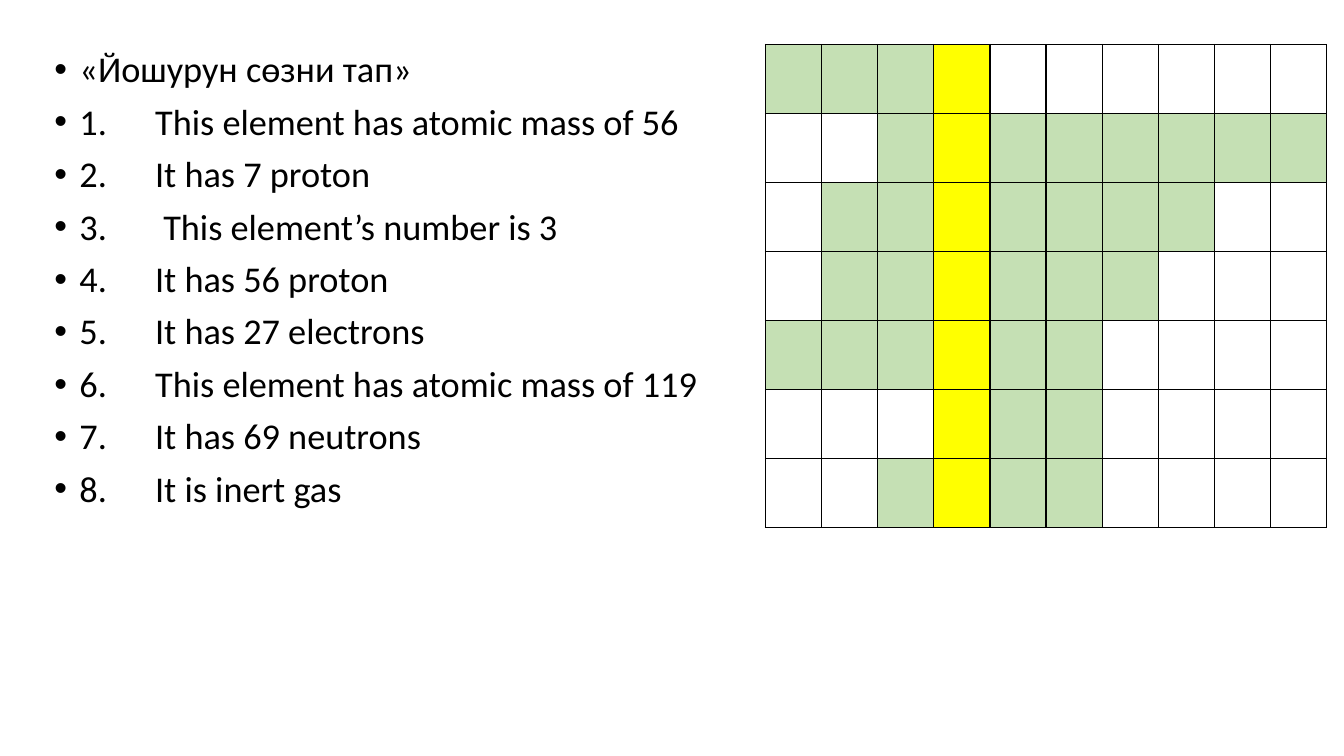
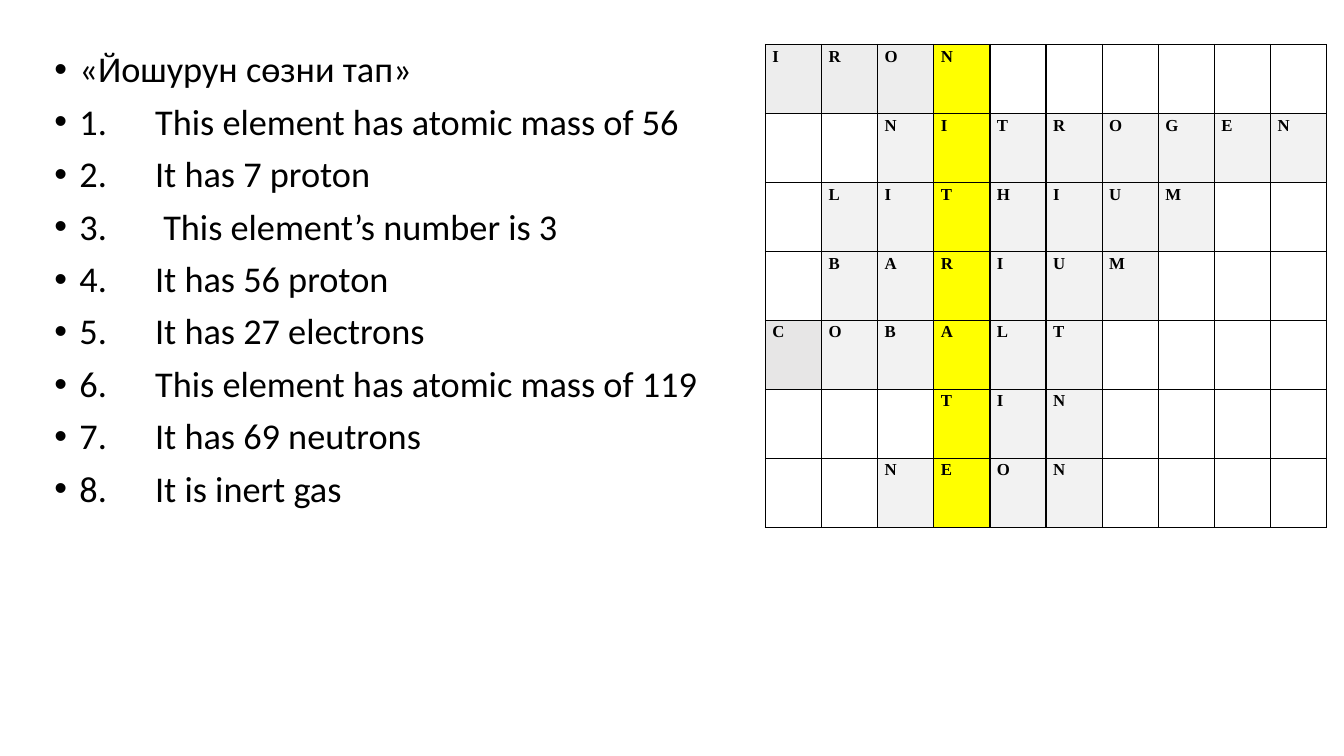
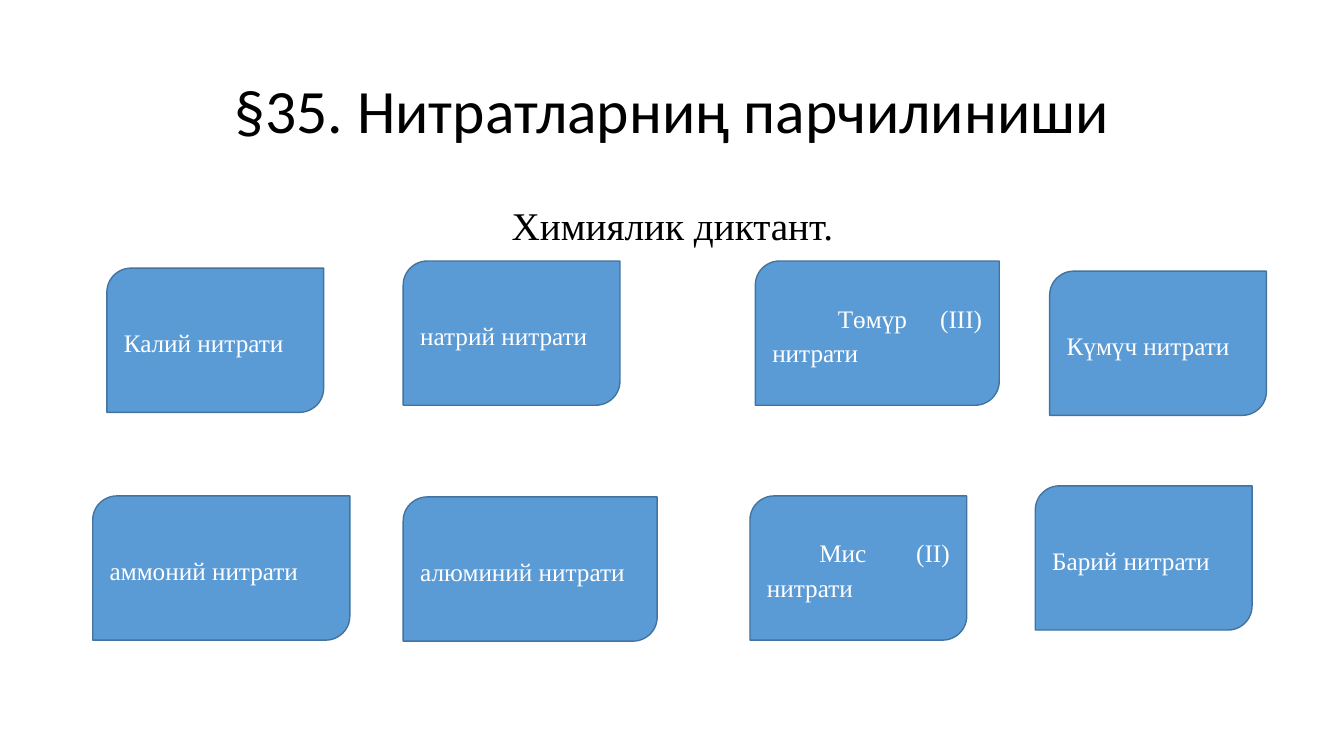
from dataclasses import dataclass

from pptx import Presentation
from pptx.dml.color import RGBColor
from pptx.enum.shapes import MSO_SHAPE
from pptx.enum.text import MSO_ANCHOR, PP_ALIGN
from pptx.oxml.ns import qn
from pptx.util import Inches, Pt
from lxml import etree

CHIP = MSO_SHAPE.ROUND_2_DIAG_RECTANGLE
TOP, MIDDLE = MSO_ANCHOR.TOP, MSO_ANCHOR.MIDDLE
LEFT, CENTER, JUSTIFY = PP_ALIGN.LEFT, PP_ALIGN.CENTER, PP_ALIGN.JUSTIFY
TITLE_ONLY, BLANK = 5, 6
WIDE, HIGH = Inches(13.33), Inches(7.5)


@dataclass(frozen=True)
class Theme:
    sans: str = "Calibri"
    serif: str = "Times New Roman"
    ink: str = "000000"
    paper: str = "FFFFFF"
    blue: str = "5B9BD5"
    edge: str = "43739E"
    green: str = "C5E0B4"
    key: str = "FFFF00"
    pale: str = "F2F2F2"
    soft: str = "EDEDED"
    dim: str = "E7E6E6"
    title: float = 44
    lead: float = 28
    clue: float = 25.9
    chip: float = 18
    cell: float = 12


@dataclass(frozen=True)
class Box:
    """Place and size as percent of the slide's width and height."""
    x: float
    y: float
    w: float
    h: float

    def place(self) -> tuple[int, int, int, int]:
        return (int(WIDE * self.x / 100), int(HIGH * self.y / 100),
                int(WIDE * self.w / 100), int(HIGH * self.h / 100))


@dataclass(frozen=True)
class Word:
    """A crossword answer, the column it starts in and its tints."""
    start: int
    text: str
    tint: str
    head: str = ""


@dataclass(frozen=True)
class Salt:
    text: str
    x: float
    y: float
    w: float = 16.13
    indent: float = 0


T = Theme()
COLS, KEY_COL = 10, 3
CLUE_BOX = Box(3.3, 6.13, 52.6, 63.5)
GRID_BOX = Box(56.95, 5.87, 41.78, 63.87)
TITLE_BOX = Box(6.9, 5.33, 86.25, 19.33)
LEAD_BOX = Box(6.9, 26.67, 86.25, 63.5)
CHIP_H = 19.07

HEADING = "«Йошурун сөзни тап»"
CLUES = (
    "This element has atomic mass of 56",
    "It has 7 proton",
    " This element’s number is 3",
    "It has 56 proton",
    "It has 27 electrons",
    "This element has atomic mass of 119",
    "It has 69 neutrons",
    "It is inert gas",
)
WORDS = (
    Word(0, "IRON", T.soft),
    Word(2, "NITROGEN", T.pale),
    Word(1, "LITHIUM", T.pale),
    Word(1, "BARIUM", T.pale),
    Word(0, "COBALT", T.pale, T.dim),
    Word(3, "TIN", T.pale),
    Word(2, "NEON", T.pale),
)
SALTS = (
    Salt("Калий нитрати", 7.95, 35.47),
    Salt("натрий нитрати", 30, 34.53),
    Salt("Төмүр (III) нитрати", 56.2, 34.53, 18.15, 0.65),
    Salt("Күмүч нитрати", 78.1, 35.87),
    Salt("аммоний нитрати", 6.9, 65.6, 19.13),
    Salt("алюминий нитрати", 30, 65.73, 18.9),
    Salt("Мис (II) нитрати", 55.8, 65.6, indent=0.52),
    Salt("Барий нитрати", 77.03, 64.27),
)


def rgb(code: str) -> RGBColor:
    return RGBColor.from_string(code)


def write(frame, *lines: str, size: float, face: str = T.sans,
          color: str = T.ink, bold: bool = False, align=LEFT, anchor=None,
          lead: float = 0.9, gap: float = 0, indent: float = 0,
          bullet: bool = False) -> None:
    frame.word_wrap = True
    if anchor is not None:
        frame.vertical_anchor = anchor
    for n, line in enumerate(lines):
        para = frame.add_paragraph() if n else frame.paragraphs[0]
        props = para._p.get_or_add_pPr()
        if bullet:
            props.set("marL", str(Inches(0.25)))
            props.set("indent", str(-Inches(0.25)))
            etree.SubElement(props, qn("a:buFont"), typeface="Arial")
            etree.SubElement(props, qn("a:buChar"), char="•")
        elif indent:
            props.set("indent", str(Inches(indent)))
        para.alignment = align
        para.line_spacing = lead
        para.space_before = Pt(gap if n else 0)
        run = para.add_run()
        run.text = line
        font = run.font
        font.size, font.name, font.bold = Pt(size), face, bold
        font.color.rgb = rgb(color)


def outline(cell) -> None:
    props = cell._tc.get_or_add_tcPr()
    for side in ("lnL", "lnR", "lnT", "lnB"):
        line = etree.SubElement(props, qn(f"a:{side}"), w=str(Pt(1)))
        fill = etree.SubElement(line, qn("a:solidFill"))
        etree.SubElement(fill, qn("a:srgbClr"), val=T.ink)


def draw_grid(slide, solved: bool) -> None:
    place = GRID_BOX.place()
    table = slide.shapes.add_table(len(WORDS), COLS, *place).table
    table.first_row = table.horz_banding = False
    for col in table.columns:
        col.width = place[2] // COLS
    for row, word in enumerate(WORDS):
        table.rows[row].height = place[3] // len(WORDS)
        for col in range(COLS):
            cell = table.cell(row, col)
            outline(cell)
            spot = col - word.start
            if not 0 <= spot < len(word.text):
                cell.fill.background()
                continue
            tint = word.head if word.head and spot == 0 else word.tint
            cell.fill.solid()
            cell.fill.fore_color.rgb = rgb(
                T.key if col == KEY_COL else tint if solved else T.green)
            if solved:
                cell.margin_left = cell.margin_right = Inches(0.07)
                cell.margin_top = cell.margin_bottom = 0
                write(cell.text_frame, word.text[spot], size=T.cell,
                      face=T.serif, bold=True, align=JUSTIFY, lead=1.15)


def add_puzzle(deck, solved: bool) -> None:
    slide = deck.slides.add_slide(deck.slide_layouts[BLANK])
    box = slide.shapes.add_textbox(*CLUE_BOX.place())
    clues = (f"{n}.\t{clue}" for n, clue in enumerate(CLUES, 1))
    write(box.text_frame, HEADING, *clues, size=T.clue, gap=9.5,
          bullet=True, anchor=TOP)
    draw_grid(slide, solved)


def draw_salt(slide, salt: Salt) -> None:
    box = Box(salt.x, salt.y, salt.w, CHIP_H)
    chip = slide.shapes.add_shape(CHIP, *box.place())
    chip.shadow.inherit = False
    chip.fill.solid()
    chip.fill.fore_color.rgb = rgb(T.blue)
    chip.line.color.rgb = rgb(T.edge)
    chip.line.width = Pt(1)
    write(chip.text_frame, salt.text, size=T.chip, face=T.serif,
          color=T.paper, align=JUSTIFY, anchor=MIDDLE, lead=1.15,
          indent=salt.indent)


def add_salts(deck) -> None:
    slide = deck.slides.add_slide(deck.slide_layouts[TITLE_ONLY])
    title = slide.shapes.title
    title.left, title.top, title.width, title.height = TITLE_BOX.place()
    write(title.text_frame, "§35. Нитратларниң парчилиниши", size=T.title,
          align=CENTER, anchor=MIDDLE)
    lead = slide.shapes.add_textbox(*LEAD_BOX.place())
    write(lead.text_frame, "Химиялик диктант.", size=T.lead, face=T.serif,
          align=CENTER, anchor=TOP)
    for salt in SALTS:
        draw_salt(slide, salt)


def main() -> None:
    deck = Presentation()
    deck.slide_width, deck.slide_height = WIDE, HIGH
    for solved in (False, True):
        add_puzzle(deck, solved)
    add_salts(deck)
    deck.save("out.pptx")


if __name__ == "__main__":
    main()
